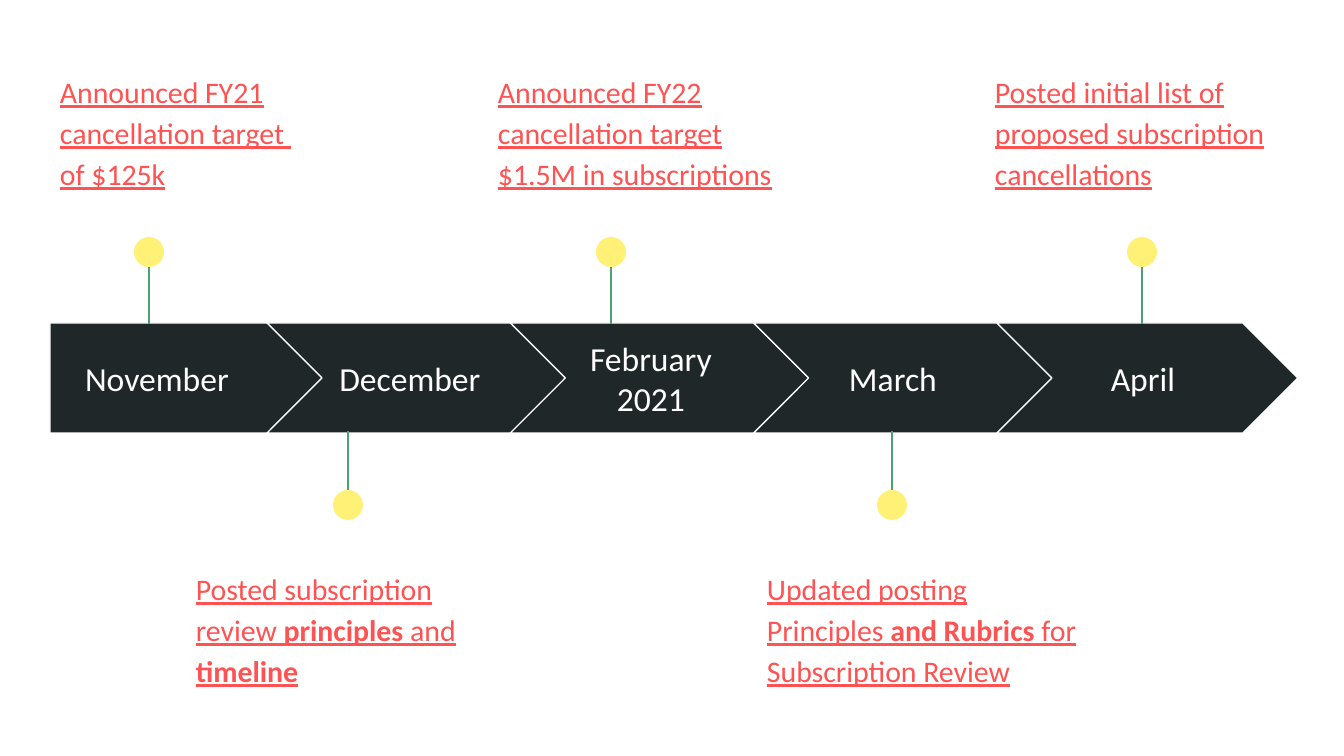
from lxml.etree import SubElement
from pptx import Presentation
from pptx.dml.color import RGBColor
from pptx.enum.shapes import MSO_CONNECTOR as CONN, MSO_SHAPE as SHAPE
from pptx.enum.text import MSO_ANCHOR as ANCHOR, PP_ALIGN as ALIGN
from pptx.oxml.ns import qn
from pptx.util import Pt

PX = 914400 / 134.4
FONT = "Calibri"
DARK, WHITE, RED, YELLOW, GREEN = "202729", "FFFFFF", "FF5252", "FFF176", "4BA173"

# month, label (left, width), pin centre, note, note (left, width); *bold* in notes
STEPS = [
    ("November", (50, 214), 149,
     "Announced FY21 cancellation target \vof $125k", (47, 329)),
    ("December", (313, 194), 348,
     "Posted subscription review *principles* and *timeline*", (183, 329)),
    ("February\n2021", (554, 194), 611,
     "Announced FY22 cancellation target $1.5M in subscriptions", (485, 329)),
    ("March", (796, 194), 892,
     "Updated posting Principles *and Rubrics* for Subscription Review", (754, 349)),
    ("April", (1046, 194), 1142,
     "Posted initial list of proposed subscription cancellations", (982, 329)),
]

BAR_LEFT, BAR_TOP, BAR_H = 50, 323, 110
FIRST_W, CHEVRON_W, CHEVRON_LEFT, PITCH = 276, 301, 267, 243.3
LABEL_TOP, LABEL_H = 344, 68
DOT = 30
ABOVE = {"line": (242, 324), "dot": 237, "note": 55}
BELOW = {"line": (513, 431), "dot": 490, "note": 552}
NOTE_H, INSET = 146, 13


def px(n):
    return round(n * PX)


def rgb(color):
    return RGBColor.from_string(color)


def add_box(kind, left, top, width, height, fill, line=None):
    sp = s.shapes.add_shape(kind, px(left), px(top), px(width), px(height))
    sp.shadow.inherit = False
    sp.fill.solid()
    sp.fill.fore_color.rgb = rgb(fill)
    if line:
        sp.line.color.rgb = rgb(line)
        sp.line.width = Pt(0.75)
    else:
        sp.line.fill.background()
    return sp


def add_text(left, top, width, height, anchor):
    tf = s.shapes.add_textbox(px(left), px(top), px(width), px(height)).text_frame
    tf.word_wrap = True
    tf.vertical_anchor = anchor
    tf.margin_left = tf.margin_right = tf.margin_top = tf.margin_bottom = px(INSET)
    return tf


def style(r, size, color):
    r.font.name = FONT
    r.font.size = Pt(size)
    r.font.color.rgb = rgb(color)


def add_label(text, left, width):
    tf = add_text(left, LABEL_TOP, width, LABEL_H, ANCHOR.MIDDLE)
    tf.text = text
    for p in tf.paragraphs:
        p.alignment = ALIGN.CENTER
        for r in p.runs:
            style(r, 18, WHITE)


def add_pin(x, side):
    start, end = side["line"]
    line = s.shapes.add_connector(CONN.STRAIGHT, px(x), px(start), px(x), px(end))
    line.line.color.rgb = rgb(GREEN)
    line.line.width = Pt(0.75)
    SubElement(line._element.spPr, qn("a:effectLst"))
    add_box(SHAPE.OVAL, x - DOT / 2, side["dot"], DOT, DOT, YELLOW)


def add_note(text, left, width, top):
    p = add_text(left, top, width, NOTE_H, ANCHOR.TOP).paragraphs[0]
    p.line_spacing = 1.15
    p.space_after = Pt(12)
    for i, part in enumerate(text.split("*")):
        for j, piece in enumerate(part.split("\v")):
            if j:
                p.add_line_break()
            if piece:
                r = p.add_run()
                r.text = piece
                style(r, 16, RED)
                r.font.underline = True
                r.font.bold = i % 2 == 1


prs = Presentation()
prs.slide_width, prs.slide_height = px(1344), px(756)
s = prs.slides.add_slide(prs.slide_layouts[6])

for i, (month, label, pin, note, note_at) in enumerate(STEPS):
    side = BELOW if i % 2 else ABOVE
    if i == 0:
        add_box(SHAPE.PENTAGON, BAR_LEFT, BAR_TOP, FIRST_W, BAR_H, DARK, WHITE)
    else:
        left = CHEVRON_LEFT + (i - 1) * PITCH
        add_box(SHAPE.CHEVRON, left, BAR_TOP, CHEVRON_W, BAR_H, DARK, WHITE)
    add_label(month, *label)
    add_pin(pin, side)
    add_note(note, *note_at, side["note"])

prs.save("out.pptx")
